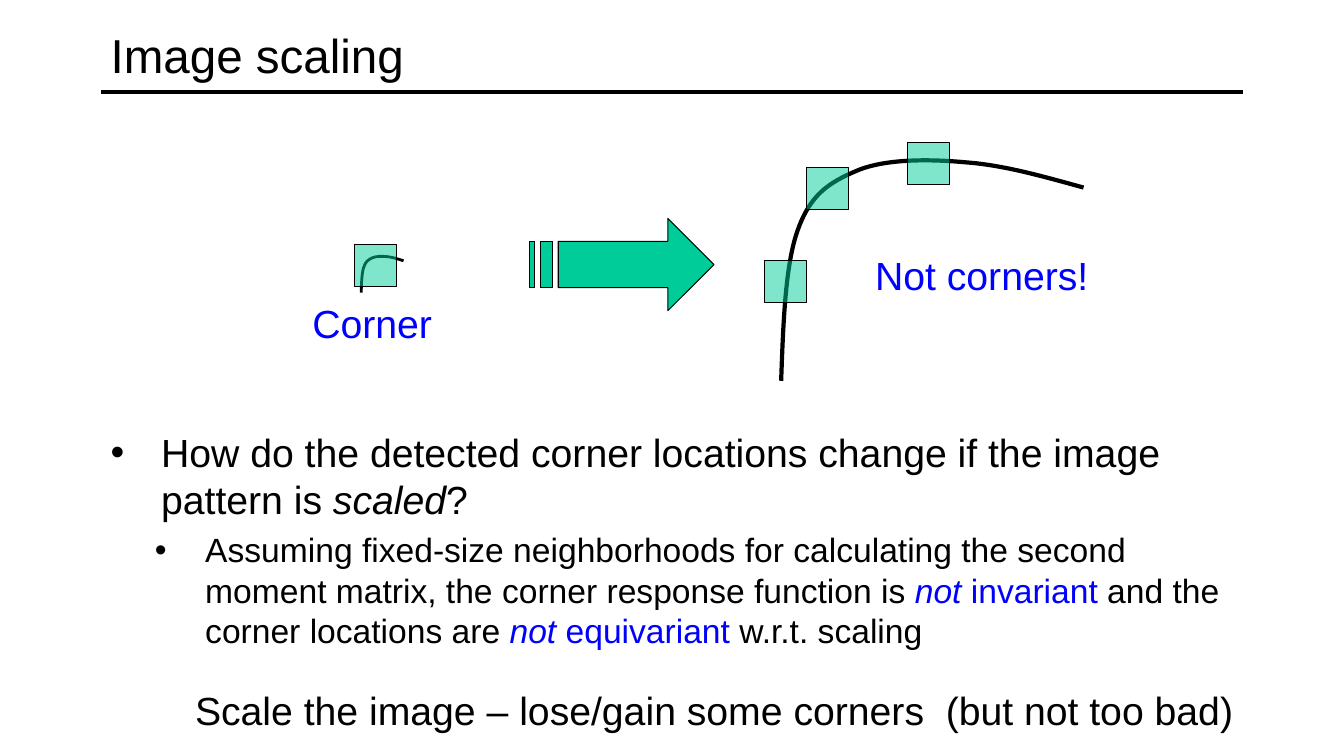
from lxml.etree import SubElement
from pptx import Presentation
from pptx.dml.color import RGBColor
from pptx.enum.shapes import MSO_CONNECTOR as Link, MSO_SHAPE as Shape
from pptx.enum.text import MSO_ANCHOR as Anchor, PP_ALIGN as Align
from pptx.oxml.ns import qn
from pptx.util import Pt

# Content: a paragraph is a list of (text, colour, italic) runs
COLORS = {"black": "000000", "blue": "0000FF", "green": "00CC99"}
TITLE = [("Image scaling", "black", False)]
CORNER = [("Corner", "blue", False)]
NOT_CORNERS = [("Not corners!", "blue", False)]
SUMMARY = [("Scale the image – lose/gain some corners  (but not too bad)", "black", False)]
QUESTION = [
    ("How do the detected corner locations change if the image pattern is ", "black", False),
    ("scaled", "black", True),
    ("?", "black", False),
]
ANSWER = [
    ("Assuming fixed-size neighborhoods for calculating the second moment matrix, "
     "the corner response function is ", "black", False),
    ("not", "blue", True),
    (" invariant ", "blue", False),
    ("and the corner locations are ", "black", False),
    ("not ", "blue", True),
    ("equivariant ", "blue", False),
    ("w.r.t. scaling", "black", False),
]

# Geometry in points; the curve is a chain of cubic Béziers
CURVE = [(558, 272), (559.5, 230.5), (561, 188.5), (570, 164),
         (579, 139), (592, 130.5), (612, 122),
         (632, 113.5), (663, 113.5), (690, 116),
         (717, 118), (745, 126), (774, 134)]
CURVE_LEFT, CURVE_TOP = 558, 114
WINDOW = 30
SMALL_WINDOWS = [(253.5, 175)]
LARGE_WINDOWS = [(648, 102), (576, 120), (546, 186)]
ARROW_TIP, ARROW_NECK, ARROW_MID = 510, 477, 189
ARROW_HALF, SHAFT_HALF = 33, 16.5
SHAFT_LEFT = 398.75
STRIPES = [(386, 394.5), (378, 382)]
LEFT, WIDTH, RULE_Y = 72, 816, 66

deck = Presentation()
deck.slide_width, deck.slide_height = Pt(960), Pt(540)
slide = deck.slides.add_slide(deck.slide_layouts[6])
shapes = slide.shapes


def color(name):
    return RGBColor.from_string(COLORS[name])


def outline(part, width):
    part.line.color.rgb = color("black")
    part.line.width = Pt(width)


def fill_green(part):
    part.shadow.inherit = False
    part.fill.solid()
    part.fill.fore_color.rgb = color("green")
    outline(part, 0.75)


def add_text(box, paragraphs, sizes=(28,), align=Align.LEFT, anchor=Anchor.TOP,
             indents=None):
    frame = shapes.add_textbox(*map(Pt, box)).text_frame
    frame.word_wrap = True
    frame.vertical_anchor = anchor
    for i, (runs, size) in enumerate(zip(paragraphs, sizes)):
        para = frame.add_paragraph() if i else frame.paragraphs[0]
        para.alignment = align
        if i:
            para.space_before = Pt(size * 0.2)
        for text, shade, italic in runs:
            run = para.add_run()
            run.text = text
            run.font.name = "Arial"
            run.font.size = Pt(size)
            run.font.italic = italic
            run.font.color.rgb = color(shade)
        if indents:
            props = para._p.get_or_add_pPr()
            props.set("marL", str(Pt(indents[i])))
            props.set("indent", str(Pt(-36)))
            SubElement(props, qn("a:buFont"), typeface="Arial")
            SubElement(props, qn("a:buChar"), char="•")


def to_emu(points):
    return [(Pt(x), Pt(y)) for x, y in points]


def add_curve(left, top, scale_x, scale_y, width):
    start, *controls = to_emu((left + (x - CURVE_LEFT) * scale_x,
                               top + (y - CURVE_TOP) * scale_y) for x, y in CURVE)
    builder = shapes.build_freeform(*start)
    builder.add_line_segments(controls, close=False)
    curve = builder.convert_to_shape()
    # Every three segments become one Bézier
    segments = list(curve._element.iter(qn("a:lnTo")))
    for i in range(0, len(segments), 3):
        bend = SubElement(segments[i].getparent(), qn("a:cubicBezTo"))
        for segment in segments[i:i + 3]:
            bend.append(segment[0])
            segment.getparent().remove(segment)
    curve.shadow.inherit = False
    curve.fill.background()
    outline(curve, width)


def add_windows(places):
    for left, top in places:
        window = shapes.add_shape(Shape.RECTANGLE, Pt(left), Pt(top), Pt(WINDOW), Pt(WINDOW))
        fill_green(window)
        shade = window._element.spPr.find(qn("a:solidFill"))[0]
        SubElement(shade, qn("a:alpha"), val="50000")


def add_arrow():
    top, bottom = ARROW_MID - SHAFT_HALF, ARROW_MID + SHAFT_HALF
    head = to_emu([(ARROW_NECK, ARROW_MID - ARROW_HALF), (ARROW_NECK, top),
                   (SHAFT_LEFT, top), (SHAFT_LEFT, bottom), (ARROW_NECK, bottom),
                   (ARROW_NECK, ARROW_MID + ARROW_HALF), (ARROW_TIP, ARROW_MID)])
    builder = shapes.build_freeform(*head[0])
    builder.add_line_segments(head[1:])
    for left, right in STRIPES:
        stripe = to_emu([(left, top), (left, bottom), (right, bottom), (right, top)])
        builder.move_to(*stripe[0])
        builder.add_line_segments(stripe[1:])
    fill_green(builder.convert_to_shape())


# Title and rule
rule = shapes.add_connector(Link.STRAIGHT, Pt(LEFT), Pt(RULE_Y), Pt(LEFT + WIDTH), Pt(RULE_Y))
outline(rule, 3)
SubElement(rule._element.spPr, qn("a:effectLst"))
add_text((LEFT, 6, WIDTH, 66), [TITLE], sizes=(34,), anchor=Anchor.MIDDLE)

# Small pattern: one corner
add_curve(258, 183, 0.14, 0.165, 2)
add_windows(SMALL_WINDOWS)
add_text((216, 210, 126, 41), [CORNER])

# Scaling arrow and enlarged pattern: no corners
add_curve(CURVE_LEFT, CURVE_TOP, 1, 1, 3)
add_arrow()
add_windows(LARGE_WINDOWS)
add_text((618, 176, 204, 41), [NOT_CORNERS])

# Explanation and summary
add_text((LEFT, 302.5, WIDTH, 204), [QUESTION, ANSWER], sizes=(28, 24), indents=(36, 67.5))
add_text((83.5, 487, 853, 41), [SUMMARY], align=Align.CENTER)

deck.save("out.pptx")
